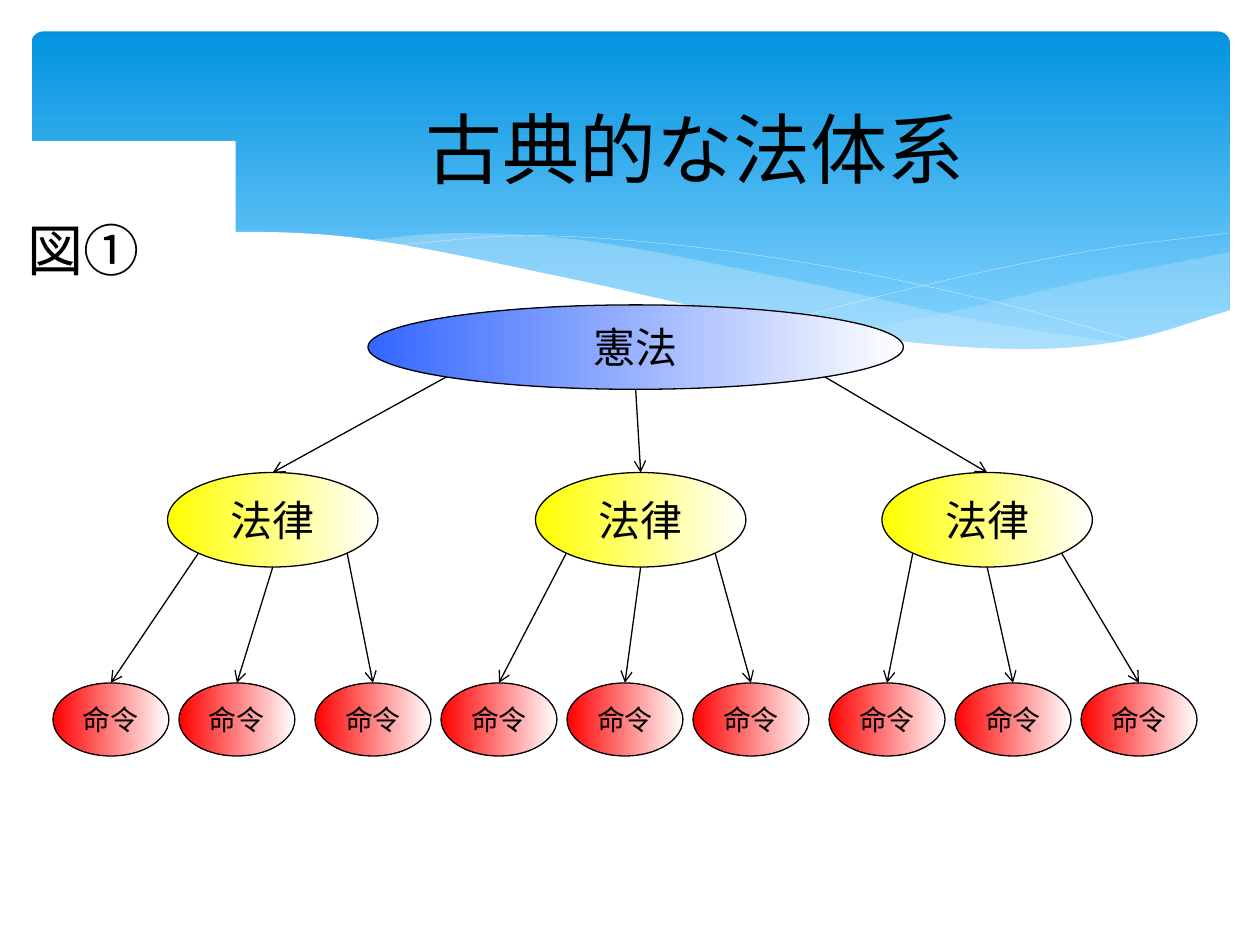
from math import sqrt

from lxml.etree import SubElement
from pptx import Presentation
from pptx.dml.color import RGBColor
from pptx.enum.shapes import MSO_CONNECTOR as Connector, MSO_SHAPE as Shape
from pptx.enum.text import MSO_ANCHOR as Anchor, PP_ALIGN as Align
from pptx.oxml.ns import qn
from pptx.util import Inches, Pt

BLACK = RGBColor(0x00, 0x00, 0x00)
WHITE = RGBColor(0xFF, 0xFF, 0xFF)
BLUE = RGBColor(0x33, 0x66, 0xFF)
YELLOW = RGBColor(0xFF, 0xFF, 0x00)
RED = RGBColor(0xFF, 0x00, 0x00)
SKY = RGBColor(0x02, 0x93, 0xE0)
PALE_SKY = RGBColor(0x83, 0xD3, 0xFE)
MIST = RGBColor(0xC6, 0xE7, 0xFC)

TITLE = "古典的な法体系"
FIGURE_LABEL = "図①"
CONSTITUTION = dict(text="憲法", size=24, color=BLUE, top=2.42, width=4.25, height=0.67)
LAW = dict(text="法律", size=24, color=YELLOW, top=3.75, width=1.67, height=0.75)
ORDER = dict(text="命令", size=16, color=RED, top=5.42, width=0.92, height=0.58)
CONSTITUTION_LEFT = 2.92
BRANCHES = [
    (1.33, (0.42, 1.42, 2.5)),
    (4.25, (3.5, 4.5, 5.5)),
    (7, (6.58, 7.58, 8.58)),
]

SIDES = (-1, 0, 1)
DIAGONAL = sqrt(0.5)
CURVE_STEPS = 8
LINE_WIDTH = Pt(0.75)
HAIRLINE = Pt(0.1)

RIGHT_CREST = [(6.61, 2.65), (7.53, 2.48), (8.61, 2.23), (9.76, 2)]
RIGHT_TROUGH = [(6.61, 2.65), (7.45, 2.75), (8.14, 2.78), (8.89, 2.72), (9.76, 2.47)]
LEFT_CREST = [(2.86, 1.91), (3.61, 1.85), (4.65, 1.91), (6.29, 2.22), (7.75, 2.54), (8.93, 2.73)]
LEFT_TROUGH = [(2.86, 1.91), (4.49, 2.22), (6.34, 2.61), (7.48, 2.76), (8.18, 2.78), (8.93, 2.73)]
FALLING_LINE = [(3.09, 1.95), (4.16, 1.87), (5.33, 1.94), (6.65, 2.13), (7.95, 2.41), (9.07, 2.72)]
RISING_LINE = [(6.13, 2.57), (7.48, 2.23), (8.66, 1.99), (9.75, 1.85)]
PAGE_CREST = [
    (0.23, 2.13), (0.95, 1.91), (1.93, 1.84), (2.92, 1.9), (4.47, 2.2),
    (6.03, 2.54), (7.26, 2.72), (8.23, 2.77), (8.99, 2.69), (9.77, 2.46),
]
PAGE_FLOOR = [(0.23, 3.29), (9.77, 3.29)]


def smooth_curve(knots):
    last = len(knots) - 1
    slopes = []
    for index in range(len(knots)):
        (x0, y0), (x1, y1) = knots[max(index - 1, 0)], knots[min(index + 1, last)]
        slopes.append((y1 - y0) / (x1 - x0))
    points = [knots[0]]
    for index in range(last):
        (x0, y0), (x1, y1) = knots[index:index + 2]
        width = x1 - x0
        for step in range(1, CURVE_STEPS + 1):
            t = step / CURVE_STEPS
            rise = t * t * (3 - 2 * t)
            bend = t * (1 - t) * ((1 - t) * slopes[index] - t * slopes[index + 1])
            points.append((x0 + t * width, y0 + rise * (y1 - y0) + bend * width))
    return points


def add_outline(page, points, close):
    start, *rest = [(Inches(x), Inches(y)) for x, y in points]
    builder = page.shapes.build_freeform(*start)
    builder.add_line_segments(rest, close=close)
    outline = builder.convert_to_shape()
    outline.shadow.inherit = False
    return outline


def add_band(page, crest, trough, color, opacity=100):
    points = smooth_curve(crest) + smooth_curve(trough)[::-1]
    band = add_outline(page, points, close=True)
    band.line.fill.background()
    band.fill.solid()
    band.fill.fore_color.rgb = color
    if opacity < 100:
        color_node = band.element.spPr.find(qn("a:solidFill"))[0]
        SubElement(color_node, qn("a:alpha")).set("val", str(opacity * 1000))


def add_strand(page, knots):
    strand = add_outline(page, smooth_curve(knots), close=False)
    strand.fill.background()
    strand.line.color.rgb = WHITE
    strand.line.width = HAIRLINE


def write(shape, text, size, font="Cambria", align=Align.CENTER, anchor=Anchor.MIDDLE, wrap=False):
    frame = shape.text_frame
    frame.word_wrap = wrap
    frame.vertical_anchor = anchor
    para = frame.paragraphs[0]
    para.alignment = align
    span = para.add_run()
    span.text = text
    span.font.name = font
    span.font.size = Pt(size)
    span.font.color.rgb = BLACK


def add_box(page, kind, left, top, width, height):
    box = page.shapes.add_shape(kind, Inches(left), Inches(top), Inches(width), Inches(height))
    box.shadow.inherit = False
    box.line.fill.background()
    return box


def shade(shape, first, last, angle=0, end=1.0):
    shape.fill.gradient()
    shape.fill.gradient_angle = angle
    for stop, color, position in zip(shape.fill.gradient_stops, (first, last), (0, end)):
        stop.color.rgb = color
        stop.position = position


def add_node(page, left, level):
    node = add_box(page, Shape.OVAL, left, level["top"], level["width"], level["height"])
    shade(node, level["color"], WHITE)
    node.line.color.rgb = BLACK
    node.line.width = LINE_WIDTH
    write(node, level["text"], level["size"])
    return node


def add_arrow(page, parent, child, side):
    across = side * DIAGONAL
    down = DIAGONAL if side else 1
    begin_x = parent.left + parent.width / 2 * (1 + across)
    begin_y = parent.top + parent.height / 2 * (1 + down)
    end_x = child.left + child.width / 2
    arrow = page.shapes.add_connector(
        Connector.STRAIGHT, int(begin_x), int(begin_y), int(end_x), child.top)
    arrow.line.color.rgb = BLACK
    arrow.line.width = LINE_WIDTH
    line = arrow.element.spPr.find(qn("a:ln"))
    SubElement(line, qn("a:tailEnd")).set("type", "arrow")
    SubElement(arrow.element.spPr, qn("a:effectLst"))


def add_banner(page):
    banner = add_box(page, Shape.ROUNDED_RECTANGLE, 0.25, 0.25, 9.51, 2.7)
    banner.adjustments[0] = 0.034
    shade(banner, SKY, PALE_SKY, angle=270, end=0.9)
    add_band(page, RIGHT_CREST, RIGHT_TROUGH, MIST, opacity=29)
    add_band(page, LEFT_CREST, LEFT_TROUGH, MIST, opacity=40)
    for knots in (FALLING_LINE, RISING_LINE):
        add_strand(page, knots)
    add_band(page, PAGE_CREST, PAGE_FLOOR, WHITE)


def add_title(page):
    title = page.shapes.title
    title.left, title.top = Inches(1.26), Inches(0.68)
    title.width, title.height = Inches(8.52), Inches(0.99)
    write(title, TITLE, 44, font="Arial", wrap=True)
    page.shapes.element.append(title.element)


def add_hierarchy(page):
    constitution = add_node(page, CONSTITUTION_LEFT, CONSTITUTION)
    for law_side, (law_left, order_lefts) in zip(SIDES, BRANCHES):
        law = add_node(page, law_left, LAW)
        add_arrow(page, constitution, law, law_side)
        for order_side, order_left in zip(SIDES, order_lefts):
            order = add_node(page, order_left, ORDER)
            add_arrow(page, law, order, order_side)


def add_figure_label(page):
    label = add_box(page, Shape.RECTANGLE, 0.12, 1.12, 1.75, 2.26)
    label.fill.solid()
    label.fill.fore_color.rgb = WHITE
    write(label, FIGURE_LABEL, 32, align=Align.LEFT, anchor=Anchor.TOP, wrap=True)
    label.text_frame.margin_top = Inches(0.59)


def main():
    deck = Presentation()
    deck.slide_width, deck.slide_height = Inches(10), Inches(7.5)
    page = deck.slides.add_slide(deck.slide_layouts[5])
    for add_part in (add_banner, add_title, add_hierarchy, add_figure_label):
        add_part(page)
    deck.save("out.pptx")


if __name__ == "__main__":
    main()
